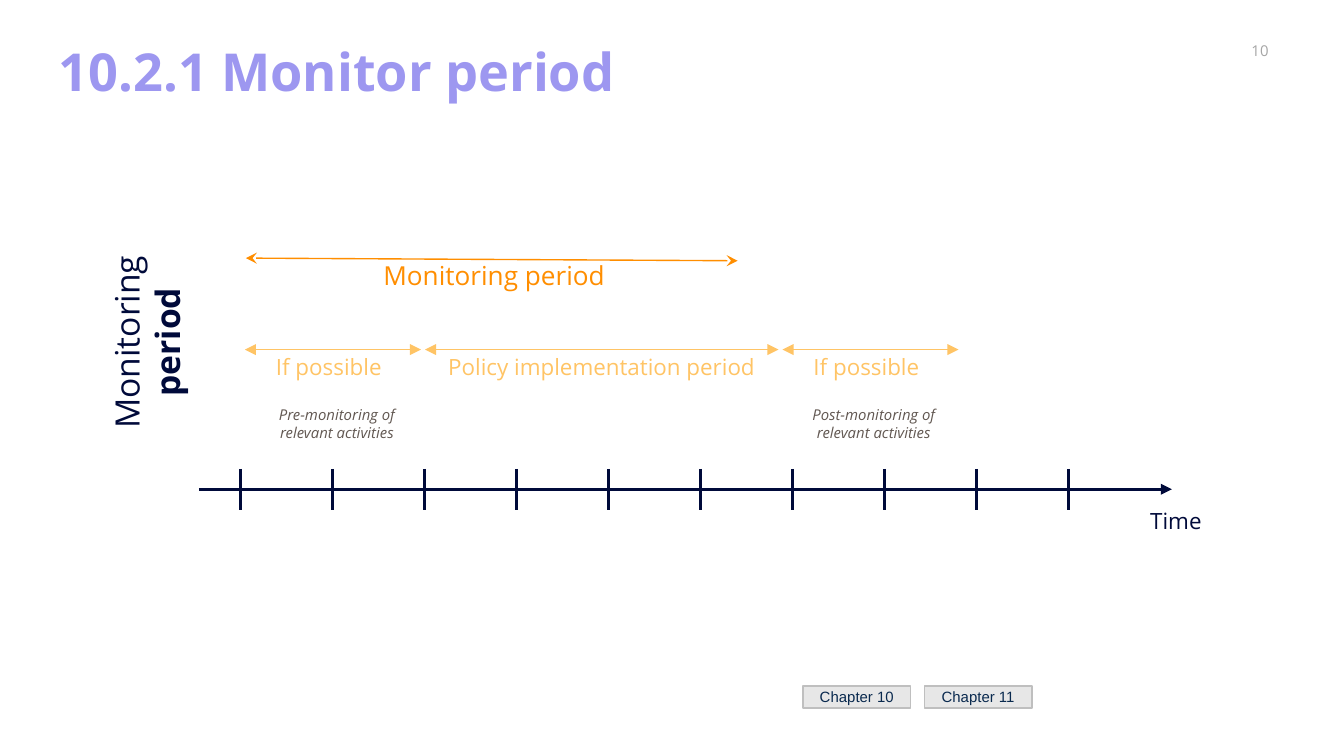
from lxml import etree
from pptx import Presentation
from pptx.dml.color import RGBColor
from pptx.enum import shapes, text
from pptx.oxml.ns import qn
from pptx.util import Pt

NAVY, ORANGE, AMBER = "000A3A", "FF8E00", "FFC465"
CENTER = text.PP_ALIGN.CENTER


def color(value):
    return RGBColor.from_string(value)


def format_runs(paragraph, size, fill, font="Open Sans", bold=False, italic=False):
    for run in paragraph.runs:
        run.font.name = font
        run.font.size = Pt(size)
        run.font.color.rgb = color(fill)
        run.font.bold = bold
        run.font.italic = italic


def add_label(slide, box, words, size, fill, align=CENTER, **style):
    shape = slide.shapes.add_textbox(*map(Pt, box))
    frame = shape.text_frame
    frame.word_wrap = True
    frame.text = words
    paragraph = frame.paragraphs[0]
    paragraph.alignment = align
    format_runs(paragraph, size, fill, **style)
    return shape


def add_line(slide, start, end, fill, width, head=None, tail=None):
    """Draw a line; head is the arrowhead at start, tail the one at end."""
    line = slide.shapes.add_connector(
        shapes.MSO_CONNECTOR.STRAIGHT, *map(Pt, (*start, *end)))
    line.line.color.rgb = color(fill)
    line.line.width = Pt(width)
    outline = line.line._get_or_add_ln()
    for tag, kind in (("a:headEnd", head), ("a:tailEnd", tail)):
        if kind:
            etree.SubElement(outline, qn(tag)).set("type", kind)
    etree.SubElement(line._element.spPr, qn("a:effectLst"))


def add_header(slide, box):
    left, top, width, height = box
    title = add_label(slide, box, "10.2.1 Monitor period", 28, "9D97F0",
                      text.PP_ALIGN.LEFT, bold=True)
    title.text_frame.vertical_anchor = text.MSO_ANCHOR.MIDDLE
    title.text_frame.paragraphs[0].line_spacing = 0.9
    number = add_label(slide, (left + width - 49, top + 2, 57, 16), "10", 8, "A5A5A5")
    frame = number.text_frame
    frame.margin_left = frame.margin_right = frame.margin_top = frame.margin_bottom = 0
    frame.vertical_anchor = text.MSO_ANCHOR.MIDDLE


def add_chapter_buttons(slide, box, names, gap=7.5):
    left, top, width, height = box
    button_width = (width - gap * (len(names) - 1)) / len(names)
    for index, name in enumerate(names):
        x = left + index * (button_width + gap)
        button = slide.shapes.add_shape(
            shapes.MSO_SHAPE.RECTANGLE, *map(Pt, (x, top, button_width, height)))
        button.shadow.inherit = False
        button.fill.solid()
        button.fill.fore_color.rgb = color("E7E7E7")
        button.line.color.rgb = color("BFBFBF")
        button.line.width = Pt(1)
        frame = button.text_frame
        frame.text = name
        frame.vertical_anchor = text.MSO_ANCHOR.MIDDLE
        paragraph = frame.paragraphs[0]
        paragraph.alignment = CENTER
        paragraph.line_spacing = 0.9
        format_runs(paragraph, 8, "09294E", font="Arial")


def add_time_axis(slide, box, ticks=10, inset=22.4, step=49.28):
    left, top, width, height = box
    middle = top + height / 2
    add_line(slide, (left, middle), (left + width, middle), NAVY, 1.5, tail="triangle")
    for index in range(ticks):
        x = left + inset + index * step
        add_line(slide, (x, top), (x, top + height), NAVY, 1.5)
    add_label(slide, (left + width - 18.7, middle + 6, 57.6, 21.6), "Time", 12, NAVY,
              text.PP_ALIGN.LEFT)


def add_axis_title(slide, box):
    left, top, width, height = box
    label = add_label(slide, (left + (width - height) / 2, top + (height - width) / 2,
                              height, width), "Monitoring ", 18, NAVY)
    label.rotation = 270
    paragraph = label.text_frame.paragraphs[0]
    paragraph.add_run().text = "period"
    format_runs(paragraph, 18, NAVY)
    paragraph.runs[1].font.bold = True


def add_periods(slide, box):
    left, top, width, height = box
    add_line(slide, (left + 264, top + 1.4), (left + 0.5, top), ORANGE, 0.75,
             "stealth", "stealth")
    add_label(slide, (left + 3.6, top - 2.9, 260, 24.5), "Monitoring period", 14, ORANGE)

    arrow_y = top + 49
    phases = (
        ("If possible", 0, 94.3, -2.2),
        ("Policy implementation period", 96.5, 189.4, 0),
        ("If possible", 288, 94.3, -2.2),
    )
    for words, offset, length, shift in phases:
        x = left + offset
        add_line(slide, (x, arrow_y), (x + length, arrow_y), AMBER, 0.75,
                 "triangle", "triangle")
        add_label(slide, (x + shift, arrow_y - 1.4, length, 21.6), words, 12, AMBER)

    notes = (("Pre", 2.2, 94.3), ("Post", 293.8, 86.4))
    for prefix, offset, note_width in notes:
        add_label(slide, (left + offset, top + height - 26.6, note_width, 26.6),
                  f"{prefix}-monitoring of relevant activities", 8, "625852", italic=True)


def main():
    presentation = Presentation()
    presentation.slide_width, presentation.slide_height = Pt(720), Pt(405)
    slide = presentation.slides.add_slide(presentation.slide_layouts[6])
    add_header(slide, (24.5, 17.2, 671, 45.4))
    add_chapter_buttons(slide, (430.3, 367.5, 122.5, 12), ("Chapter 10", "Chapter 11"))
    add_time_axis(slide, (106.5, 251.2, 521.3, 21.8))
    add_axis_title(slide, (53.3, 116, 51.1, 134.6))
    add_periods(slide, (131.2, 138.3, 382.3, 102.2))
    presentation.save("out.pptx")


if __name__ == "__main__":
    main()
